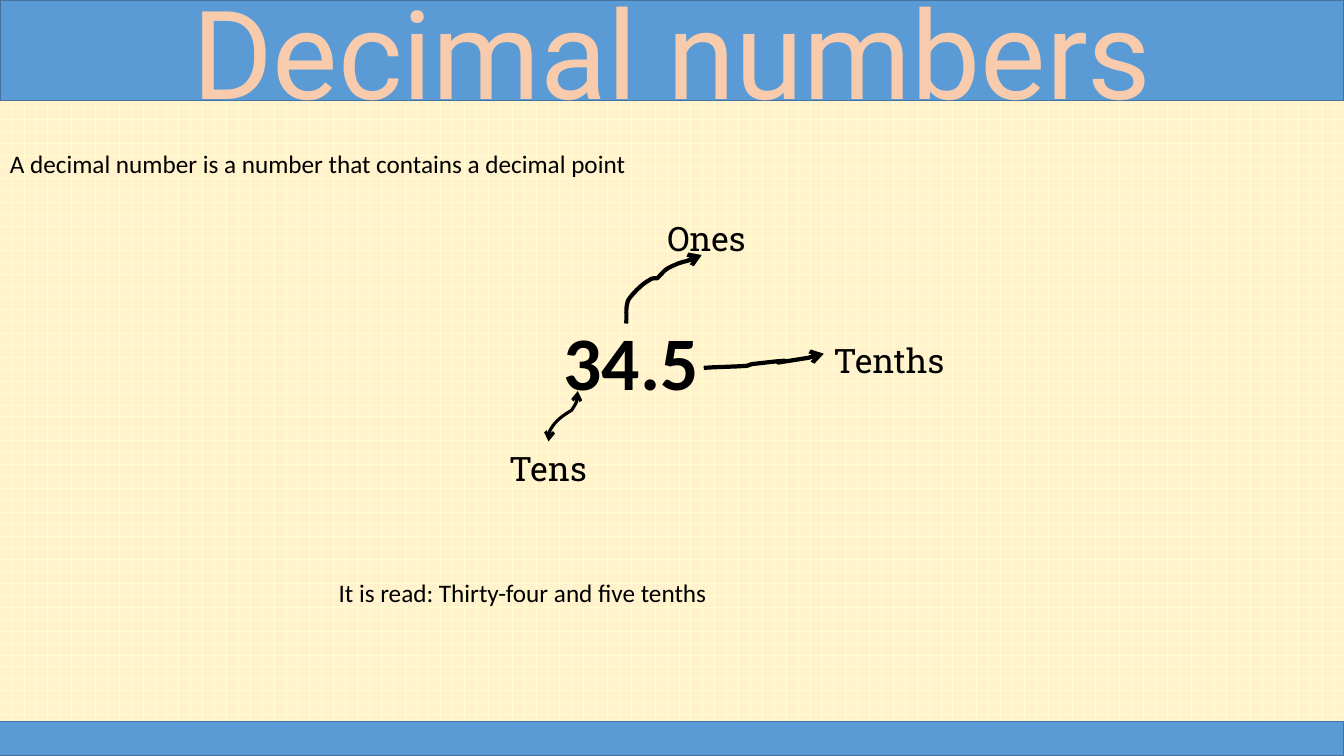
import pptx
import pptx.util
import pptx.dml.color
import pptx.enum.dml
import pptx.enum.shapes
import pptx.enum.text
import pptx.oxml
import pptx.oxml.ns
from pptx.util import Inches

COLORS = {
    "ink": "000000", "white": "FFFFFF", "title": "F8CBAD",
    "bar": "5B9BD5", "bar_edge": "43739E",
    "brick": "FFFFCC", "paper": "FFF2CC",
}

# text, (left, top, width, height), size, font
LABELS = [
    ("Tens", (4.95, 4.39, 0.98, 0.5), 24, "Roboto Slab"),
    ("Ones", (6.52, 2.11, 1.03, 0.5), 24, "Roboto Slab"),
    ("Tenths", (8.17, 3.32, 1.37, 0.5), 24, "Roboto Slab"),
    ("A decimal number is a number that contains a decimal point",
     (0, 1.42, 10.49, 0.4), 18, "Calibri"),
    ("It is read: Thirty-four and five tenths", (3.26, 5.68, 6.82, 0.4), 18, "Calibri"),
]
NUMBER = ("34.5", (5.48, 3.07, 1.56, 1.01), 54, "Calibri")
TITLE = ("Decimal numbers", 88, "Roboto")
TITLE_BAR = (0, 0, 13.33, 1)
FOOTER_BAR = (-0.04, 7.16, 13.37, 0.34)

# start, cubic curves (two controls and an end each), line width, arrow ends
ARROWS = [
    ((5.44, 4.38), [
        ((5.44, 4.34), (5.44, 4.29), (5.46, 4.26)),
        ((5.52, 4.16), (5.59, 4.12), (5.67, 4.07)),
        ((5.7, 4.02), (5.72, 4), (5.73, 3.94)),
        ((5.73, 3.92), (5.73, 3.9), (5.73, 3.88)),
    ], 2.25, ("headEnd", "tailEnd")),
    ((6.21, 3.21), [
        ((6.22, 3.14), (6.2, 3.06), (6.23, 2.98)),
        ((6.25, 2.94), (6.37, 2.81), (6.44, 2.78)),
        ((6.46, 2.76), (6.49, 2.76), (6.52, 2.76)),
        ((6.59, 2.69), (6.59, 2.67), (6.69, 2.63)),
        ((6.73, 2.61), (6.77, 2.6), (6.81, 2.59)),
        ((6.9, 2.56), (6.9, 2.56), (6.96, 2.53)),
    ], 3, ("tailEnd",)),
    ((6.98, 3.65), [
        ((7.12, 3.64), (7.26, 3.64), (7.4, 3.63)),
        ((7.42, 3.63), (7.45, 3.61), (7.48, 3.61)),
        ((8.25, 3.52), (7.25, 3.67), (8.02, 3.55)),
        ((8.15, 3.5), (8.1, 3.51), (8.17, 3.51)),
    ], 3, ("tailEnd",)),
]
CURVE_STEPS = 8


def rgb(name):
    return pptx.dml.color.RGBColor.from_string(COLORS[name])


def write(shape, text, size, font, color="ink", centered=False):
    paragraph = shape.text_frame.paragraphs[0]
    paragraph.add_run().text = text
    paragraph.font.size = pptx.util.Pt(size)
    paragraph.font.name = font
    paragraph.font.color.rgb = rgb(color)
    if centered:
        paragraph.alignment = pptx.enum.text.PP_ALIGN.CENTER
    return paragraph


def outline_letters(paragraph, color):
    fill = paragraph.runs[0].font.fill
    fill.solid()
    fill.fore_color.rgb = paragraph.font.color.rgb
    run_properties = paragraph.runs[0]._r.get_or_add_rPr()
    run_properties.insert(0, pptx.oxml.parse_xml(
        f'<a:ln {pptx.oxml.ns.nsdecls("a")} w="9525"><a:solidFill>'
        f'<a:srgbClr val="{COLORS[color]}"/></a:solidFill></a:ln>'))


def add_label(slide, text, box, size, font, centered=False):
    shape = slide.shapes.add_textbox(*map(Inches, box))
    shape.text_frame.word_wrap = False
    shape.text_frame.auto_size = pptx.enum.text.MSO_AUTO_SIZE.SHAPE_TO_FIT_TEXT
    return write(shape, text, size, font, centered=centered)


def curve_points(start, curves):
    """Return points, as lengths, along a chain of cubic curves given in inches."""
    points = []
    for first, second, end in curves:
        for step in range(1, CURVE_STEPS + 1):
            t = step / CURVE_STEPS
            weights = ((1 - t) ** 3, 3 * t * (1 - t) ** 2, 3 * t * t * (1 - t), t ** 3)
            points.append(tuple(
                Inches(sum(weight * value for weight, value in zip(weights, values)))
                for values in zip(start, first, second, end)))
        start = end
    return points


def add_arrow(slide, start, curves, width, ends):
    builder = slide.shapes.build_freeform(*map(Inches, start))
    builder.add_line_segments(curve_points(start, curves), close=False)
    shape = builder.convert_to_shape()
    shape.shadow.inherit = False
    shape.fill.background()
    shape.line.color.rgb = rgb("ink")
    shape.line.width = pptx.util.Pt(width)
    line = shape.line._get_or_add_ln()
    for end in ends:
        line.append(pptx.oxml.parse_xml(
            f'<a:{end} {pptx.oxml.ns.nsdecls("a")} type="arrow"/>'))


def add_bar(slide, box):
    shape = slide.shapes.add_shape(
        pptx.enum.shapes.MSO_SHAPE.RECTANGLE, *map(Inches, box))
    shape.shadow.inherit = False
    shape.fill.solid()
    shape.fill.fore_color.rgb = rgb("bar")
    shape.line.color.rgb = rgb("bar_edge")
    shape.line.width = pptx.util.Pt(1)
    return shape


def main():
    presentation = pptx.Presentation()
    presentation.slide_width = Inches(13.33)
    presentation.slide_height = Inches(7.5)
    slide = presentation.slides.add_slide(presentation.slide_layouts[6])

    background = slide.background.fill
    background.patterned()
    background.pattern = pptx.enum.dml.MSO_PATTERN.HORIZONTAL_BRICK
    background.fore_color.rgb = rgb("brick")
    background.back_color.rgb = rgb("paper")

    number = add_label(slide, *NUMBER, centered=True)
    number.font.bold = True
    outline_letters(number, "white")
    for label in LABELS:
        add_label(slide, *label)
    for arrow in ARROWS:
        add_arrow(slide, *arrow)

    title_bar = add_bar(slide, TITLE_BAR)
    title_bar.text_frame.vertical_anchor = pptx.enum.text.MSO_ANCHOR.MIDDLE
    title = write(title_bar, *TITLE, color="title", centered=True)
    outline_letters(title, "ink")
    add_bar(slide, FOOTER_BAR)

    presentation.save("out.pptx")


if __name__ == "__main__":
    main()
